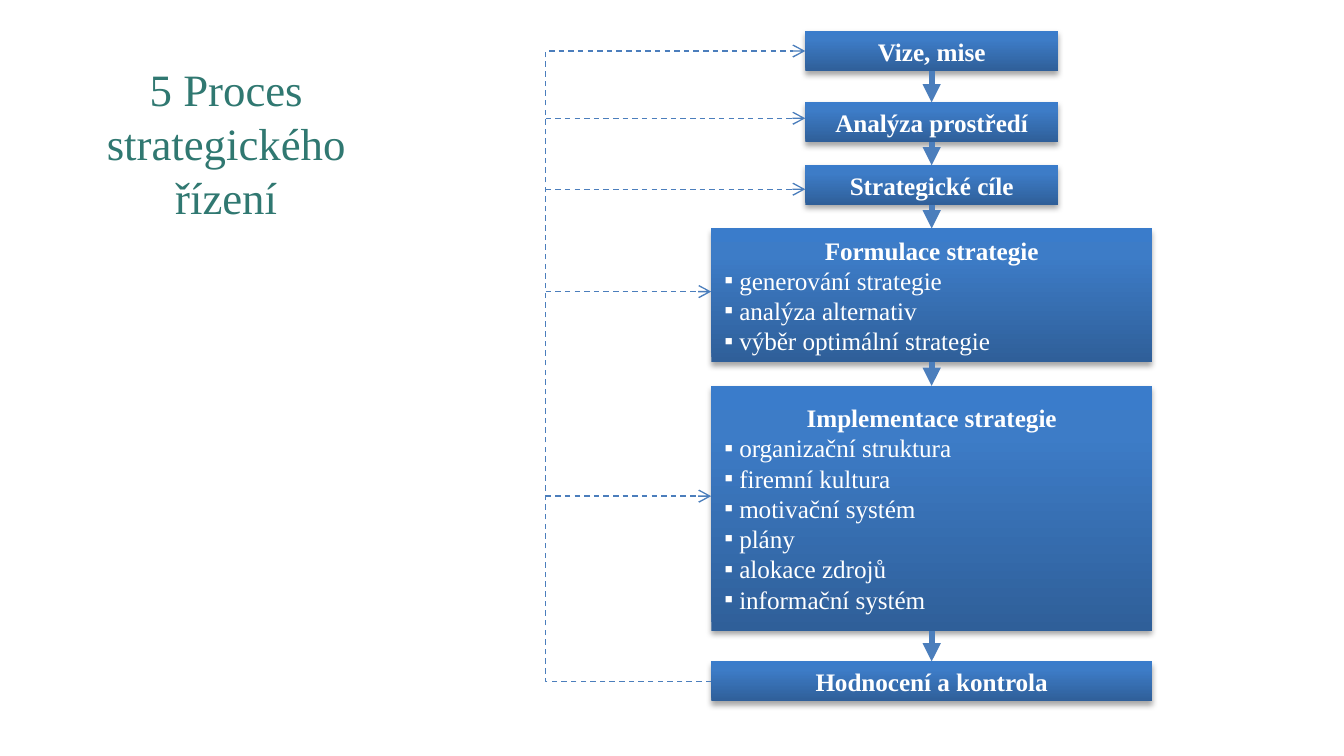
from collections import namedtuple
from copy import deepcopy
from itertools import pairwise

from lxml import etree
from pptx import Presentation
from pptx import util as u
from pptx.dml.color import RGBColor
from pptx.enum import dml, shapes, text
from pptx.oxml import ns

CELL = u.Inches(0.1)  # the slide is a grid of 100 columns by 56.25 rows
Box = namedtuple("Box", "left top width height")
Step = namedtuple("Step", "heading items top height width feedback")


class Theme:
    font = "Times New Roman"
    title = {"size": u.Pt(24), "bold": False, "color": "307871"}
    heading = {"size": u.Pt(13.5), "bold": True, "color": "FFFFFF"}
    item = {**heading, "bold": False}
    gradient = ((0, "2F5F99"), (0.8, "3D7CC7"), (1, "3A7CCB"))
    line = "4B7EBC"
    flow = {"width": u.Pt(3.25)}
    feedback = {"width": u.Pt(0.75), "dash_style": dml.MSO_LINE.DASH}
    shadow = {"blurRad": u.Pt(3.1), "dist": u.Pt(1.8), "dir": 5400000, "rotWithShape": 0}


NARROW, WIDE, SHORT = 18.8, 32.8, 2.95
AXIS, RAIL = 69.32, 40.6
TITLE_BOX = Box(4.93, 4.13, 23.8, 14.6)
STEPS = (
    Step("Vize, mise", (), 2.33, SHORT, NARROW, 3.8),
    Step("Analýza prostředí", (), 7.62, SHORT, NARROW, 8.8),
    Step("Strategické cíle", (), 12.3, SHORT, NARROW, 14.08),
    Step("Formulace strategie",
         ("generování strategie", "analýza alternativ", "výběr optimální strategie"),
         17, 9.95, WIDE, 21.7),
    Step("Implementace strategie",
         ("organizační struktura", "firemní kultura", "motivační systém",
          "plány", "alokace zdrojů", "informační systém"),
         28.72, 18.2, WIDE, 36.92),
    Step("Hodnocení a kontrola", (), 49.22, SHORT, WIDE, 50.7),
)


def cells(*counts):
    return [u.Emu(round(count * CELL)) for count in counts]


def add_element(parent, tag, **attributes):
    values = {key: str(value) for key, value in attributes.items()}
    return etree.SubElement(parent, ns.qn(tag), values)


def write(para, words, style):
    span = para.add_run()
    span.text = words
    values = dict(style)
    span.font.color.rgb = RGBColor.from_string(values.pop("color"))
    for name, value in {**values, "name": Theme.font}.items():
        setattr(span.font, name, value)


def add_bullet(para):
    props = para._p.get_or_add_pPr()
    hang = u.Inches(0.11)
    props.set("marL", str(hang))
    props.set("indent", str(-hang))
    add_element(props, "a:buFont", typeface=Theme.font)
    add_element(props, "a:buChar", char="▪")


def paint(shape):
    """Give the shape the theme's three-stop gradient and soft shadow."""
    shape.line.fill.background()
    shape.fill.gradient()
    shape.fill.gradient_angle = 90
    props = shape._element.spPr
    stop_list = props.find(".//" + ns.qn("a:gsLst"))
    stop_list.append(deepcopy(stop_list[-1]))
    for stop, (position, color) in zip(shape.fill.gradient_stops, Theme.gradient):
        stop.position = position
        stop.color.rgb = RGBColor.from_string(color)
    shape.shadow.inherit = False
    shadow = add_element(props.find(ns.qn("a:effectLst")), "a:outerShdw", **Theme.shadow)
    add_element(add_element(shadow, "a:srgbClr", val="000000"), "a:alpha", val=35000)


def add_title(page, box):
    frame = page.shapes.add_textbox(*cells(*box)).text_frame
    frame.word_wrap = True
    frame.paragraphs[0].alignment = text.PP_ALIGN.CENTER
    write(frame.paragraphs[0], "5 Proces strategického řízení", Theme.title)


def add_step(page, step, box):
    shape = page.shapes.add_shape(shapes.MSO_SHAPE.RECTANGLE, *cells(*box))
    paint(shape)
    frame = shape.text_frame
    frame.word_wrap = True
    frame.vertical_anchor = text.MSO_ANCHOR.MIDDLE
    frame.paragraphs[0].alignment = text.PP_ALIGN.CENTER
    write(frame.paragraphs[0], step.heading, Theme.heading)
    for item in step.items:
        para = frame.add_paragraph()
        para.alignment = text.PP_ALIGN.LEFT
        add_bullet(para)
        write(para, item, Theme.item)
    return shape


def add_arrow(page, start, end, style, head, kind=shapes.MSO_CONNECTOR.STRAIGHT):
    arrow = page.shapes.add_connector(kind, *cells(*start, *end))
    arrow.line.color.rgb = RGBColor.from_string(Theme.line)
    for name, value in style.items():
        setattr(arrow.line, name, value)
    props = arrow._element.spPr
    add_element(props.find(ns.qn("a:ln")), "a:tailEnd", type=head)
    add_element(props, "a:effectLst")
    return arrow


def add_flow(page, boxes):
    """Place the steps in their boxes and link each to the next."""
    placed = [add_step(page, step, box) for step, box in zip(STEPS, boxes)]
    for upper, lower in pairwise(placed):
        arrow = add_arrow(page, (0, 0), (0, 0), Theme.flow, "triangle")
        arrow.begin_connect(upper, 2)
        arrow.end_connect(lower, 0)


def add_feedback(page, boxes):
    """Run a dashed rail from the last step back to all earlier ones."""
    start = (boxes[-1].left, STEPS[-1].feedback)
    end = (boxes[0].left, STEPS[0].feedback)
    rail = add_arrow(page, start, end, Theme.feedback, "arrow", shapes.MSO_CONNECTOR.ELBOW)
    bend = round((RAIL - start[0]) / (end[0] - start[0]) * 100000)
    guides = rail._element.spPr.find(".//" + ns.qn("a:avLst"))
    add_element(guides, "a:gd", name="adj1", fmla=f"val {bend}")
    for step, box in zip(STEPS[1:-1], boxes[1:-1]):
        add_arrow(page, (RAIL, step.feedback), (box.left, step.feedback),
                  Theme.feedback, "arrow")


def main():
    deck = Presentation()
    deck.slide_width, deck.slide_height = cells(100, 56.25)
    page = deck.slides.add_slide(deck.slide_layouts[6])
    boxes = [Box(AXIS - step.width / 2, step.top, step.width, step.height) for step in STEPS]
    add_title(page, TITLE_BOX)
    add_flow(page, boxes)
    add_feedback(page, boxes)
    deck.save("out.pptx")


if __name__ == "__main__":
    main()
